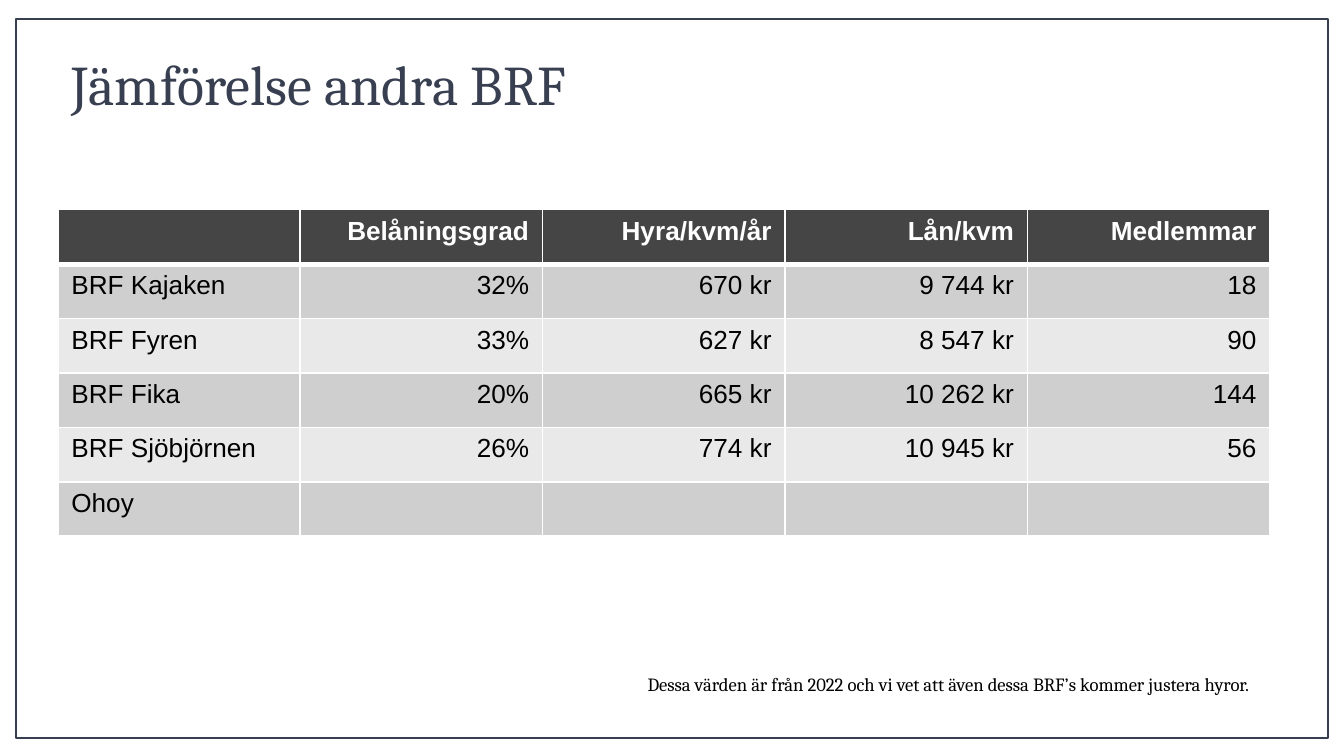
from lxml import etree
from pptx import Presentation
from pptx.dml.color import RGBColor
from pptx.enum import shapes, text
from pptx.oxml.ns import qn
from pptx.util import Pt

TITLE = "Jämförelse andra BRF"
NOTE = "Dessa värden är från 2022 och vi vet att även dessa BRF’s kommer justera hyror."
ROWS = [
    ("", "Belåningsgrad", "Hyra/kvm/år", "Lån/kvm", "Medlemmar"),
    ("BRF Kajaken", "32%", "670 kr", "9 744 kr", "18"),
    ("BRF Fyren", "33%", "627 kr", "8 547 kr", "90"),
    ("BRF Fika", "20%", "665 kr", "10 262 kr", "144"),
    ("BRF Sjöbjörnen", "26%", "774 kr", "10 945 kr", "56"),
    ("Ohoy", "", "", "", ""),
]
COLORS = {"ink": "383F50", "white": "FFFFFF", "black": "000000",
          "header": "454545", "odd": "CFCFCF", "even": "E9E9E9"}
FRAMES = [((8.64, 10.08, 702.72, 385.2), "ink", 1),
          ((2.88, 4.32, 714.24, 396.72), "white", 6)]
TABLE_BOX = (31, 112.3, 649.4, 175)
TITLE_BOX = (31, 10.1, 634.3, 69.1)
NOTE_BOX = (329, 357.1, 414, 54)


def rgb(name):
    return RGBColor.from_string(COLORS[name])


def place(box):
    return [Pt(v) for v in box]


def add_run(p, words, font, size, color, bold=False):
    r = p.add_run()
    r.text = words
    r.font.name, r.font.size, r.font.bold = font, Pt(size), bold
    r.font.color.rgb = rgb(color)


def add_frame(s, box, color, width):
    sp = s.shapes.add_shape(shapes.MSO_SHAPE.RECTANGLE, *place(box))
    sp.shadow.inherit = False
    sp.fill.background()
    sp.line.color.rgb = rgb(color)
    sp.line.width = Pt(width)


def set_borders(cell, widths):
    tc_pr = cell._tc.get_or_add_tcPr()
    for side, width in zip("LRTB", widths):
        ln = etree.SubElement(tc_pr, qn(f"a:ln{side}"), w=str(Pt(width)))
        fill = etree.SubElement(ln, qn("a:solidFill"))
        etree.SubElement(fill, qn("a:srgbClr"), val=COLORS["white"])


def add_comparison(s):
    table = s.shapes.add_table(len(ROWS), len(ROWS[0]), *place(TABLE_BOX)).table
    for i, row in enumerate(ROWS):
        head = i == 0
        fill = "header" if head else ("even", "odd")[i % 2]
        for j, words in enumerate(row):
            cell = table.cell(i, j)
            set_borders(cell, (1, 1, 3 if i == 1 else 1, 3 if head else 1))
            cell.fill.solid()
            cell.fill.fore_color.rgb = rgb(fill)
            if words:
                p = cell.text_frame.paragraphs[0]
                p.alignment = text.PP_ALIGN.RIGHT if j else text.PP_ALIGN.LEFT
                add_run(p, words, "Arial", 14, "white" if head else "black", head)


def add_title(s):
    sp = s.shapes.title
    sp.left, sp.top, sp.width, sp.height = place(TITLE_BOX)
    tf = sp.text_frame
    tf.auto_size = text.MSO_AUTO_SIZE.NONE
    tf.vertical_anchor = text.MSO_ANCHOR.MIDDLE
    p = tf.paragraphs[0]
    p.alignment = text.PP_ALIGN.LEFT
    add_run(p, TITLE, "Cambria", 30, "ink")


def add_note(s):
    tf = s.shapes.add_textbox(*place(NOTE_BOX)).text_frame
    tf.word_wrap = True
    p = tf.paragraphs[0]
    p._p.get_or_add_pPr().set("marL", str(Pt(10.8)))
    add_run(p, NOTE, "Cambria", 10, "black")


def main():
    """Build the slide comparing housing associations."""
    prs = Presentation()
    prs.slide_width, prs.slide_height = Pt(720), Pt(405)
    s = prs.slides.add_slide(prs.slide_layouts[5])
    for frame in FRAMES:
        add_frame(s, *frame)
    add_title(s)
    add_comparison(s)
    add_note(s)
    prs.save("out.pptx")


if __name__ == "__main__":
    main()
